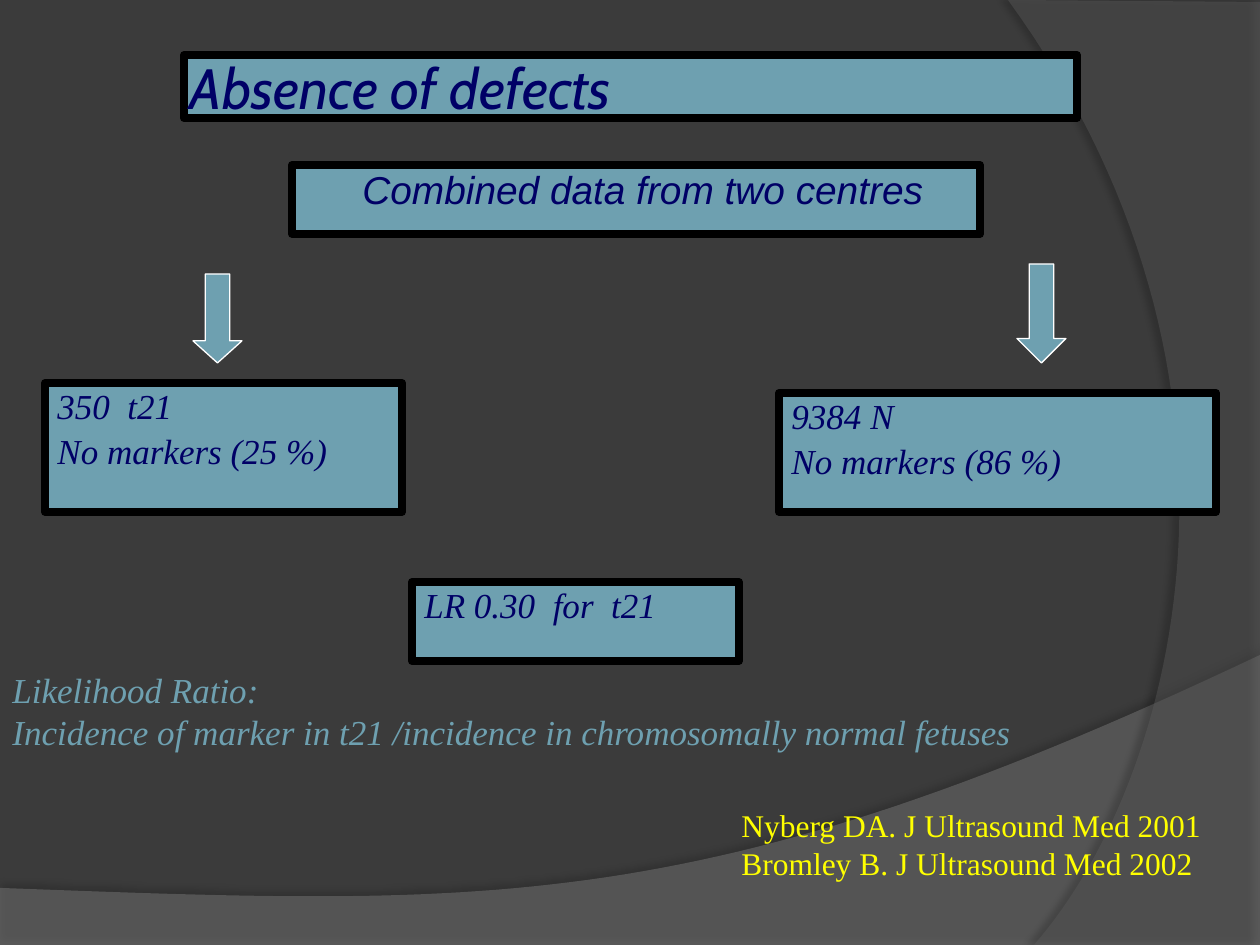
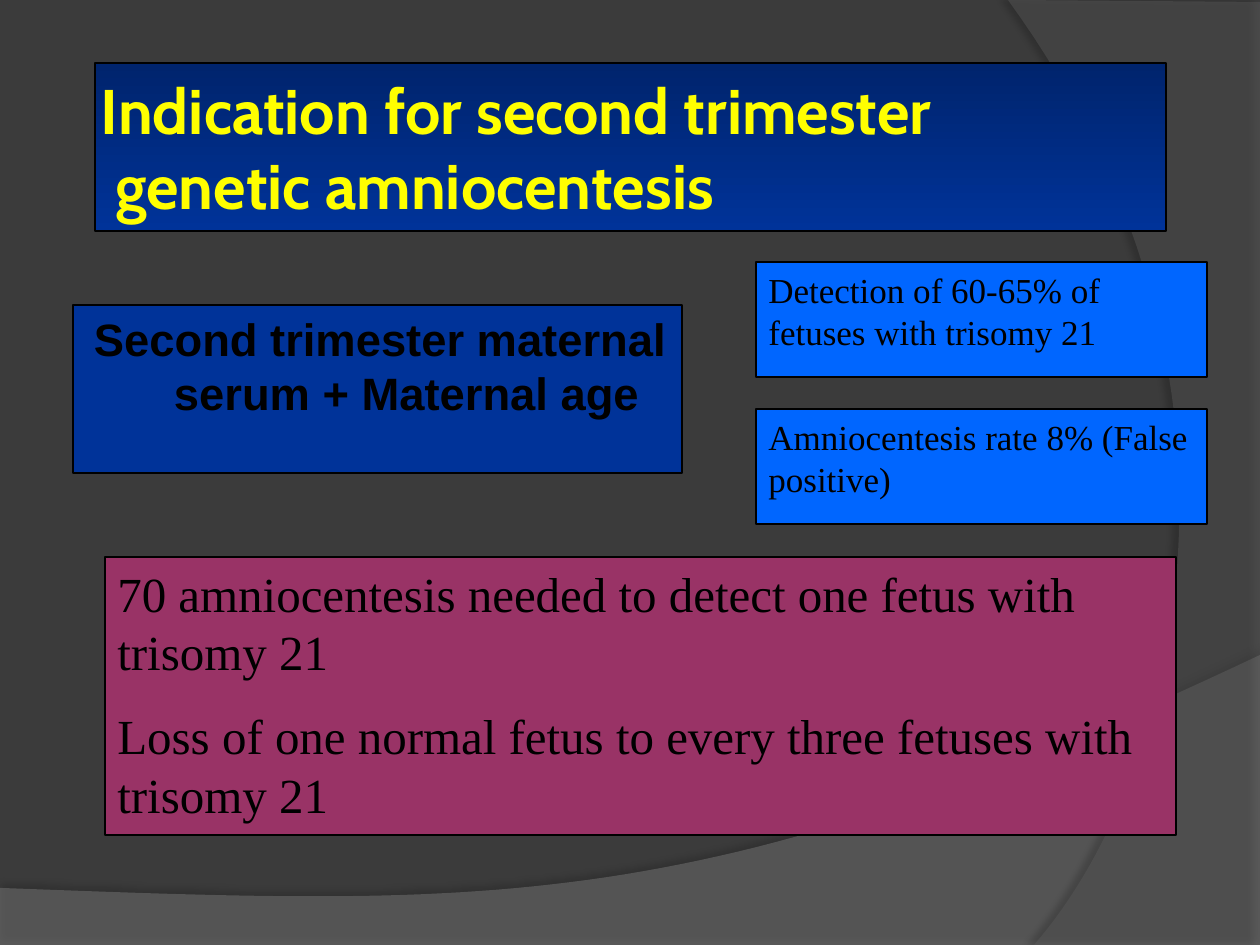
from lxml.etree import SubElement
from pptx import Presentation
from pptx.dml.color import RGBColor
from pptx.enum.shapes import MSO_SHAPE
from pptx.enum.text import MSO_ANCHOR, MSO_AUTO_SIZE, PP_ALIGN
from pptx.oxml.ns import qn
from pptx.util import Emu, Pt

# Shared style
BACKGROUND = RGBColor(0x3B, 0x3B, 0x3B)
LOWER_BAND = RGBColor(0x7F, 0x7F, 0x7F)
RIGHT_BAND = RGBColor(0x5E, 0x5E, 0x5E)
TEAL = RGBColor(0x6E, 0xA0, 0xB0)
NAVY = RGBColor(0x00, 0x00, 0x66)
DARK_BLUE = RGBColor(0x00, 0x24, 0x6D)
BLUE = RGBColor(0x00, 0x33, 0x99)
BRIGHT_BLUE = RGBColor(0x00, 0x66, 0xFF)
PLUM = RGBColor(0x99, 0x33, 0x66)
YELLOW = RGBColor(0xFF, 0xFF, 0x00)
BLACK = RGBColor(0x00, 0x00, 0x00)
WHITE = RGBColor(0xFF, 0xFF, 0xFF)

TITLE_FONT, HEADING_FONT, TEXT_FONT = "Cabin", "Arial", "Times New Roman"
EMU_PER_PX = 914400 / 126
SLIDE_WIDTH, SLIDE_HEIGHT = 1260, 945
THIN, THICK = 0.75, 4.5
TITLE_ONLY = 5


def px(length):
    return Emu(round(length * EMU_PER_PX))


def curve(start, control_1, control_2, end, steps=60):
    """Points along a cubic curve, without its start."""
    points = []
    for step in range(1, steps + 1):
        t = step / steps
        weights = ((1 - t) ** 3, 3 * t * (1 - t) ** 2, 3 * t * t * (1 - t), t ** 3)
        corners = (start, control_1, control_2, end)
        points.append(tuple(sum(w * corner[axis] for w, corner in zip(weights, corners))
                            for axis in (0, 1)))
    return points


def write_text(text_frame, text, *, font=TEXT_FONT, size=20, color=BLACK, bold=False,
               italic=False, align=PP_ALIGN.LEFT, anchor=MSO_ANCHOR.TOP, inset=None,
               line_spacing=None, gap=0, margin=0, indent=0):
    """Fill a frame: a newline starts a paragraph, a vertical tab breaks a line."""
    text_frame.word_wrap = True
    text_frame.auto_size = MSO_AUTO_SIZE.NONE
    text_frame.vertical_anchor = anchor
    if inset is not None:
        text_frame.margin_left = text_frame.margin_right = px(inset)
        text_frame.margin_top = text_frame.margin_bottom = px(inset)
    text_frame.text = text
    for index, paragraph in enumerate(text_frame.paragraphs):
        paragraph.alignment = align
        paragraph.space_before = Pt(gap if index else 0)
        if line_spacing:
            paragraph.line_spacing = line_spacing
        if margin:
            properties = paragraph._p.get_or_add_pPr()
            properties.set("marL", str(px(margin)))
            properties.set("indent", str(px(indent)))
        for run in paragraph.runs:
            run.font.name = font
            run.font.size = Pt(size)
            run.font.bold = bold
            run.font.italic = italic
            run.font.color.rgb = color


class Deck:
    def __init__(self):
        self.presentation = Presentation()
        self.presentation.slide_width = px(SLIDE_WIDTH)
        self.presentation.slide_height = px(SLIDE_HEIGHT)
        fill = self.presentation.slide_master.background.fill
        fill.solid()
        fill.fore_color.rgb = BACKGROUND
        self.slide = None

    def new_slide(self):
        layout = self.presentation.slide_layouts[TITLE_ONLY]
        self.slide = self.presentation.slides.add_slide(layout)
        lower_start, lower_end = (1260, 655), (0, 888)
        self.band([(0, 888), (0, 945), (1260, 945), lower_start]
                  + curve(lower_start, (704, 919), (493, 906), lower_end),
                  LOWER_BAND, alpha=45, shadow=(35, 4, 3.5, 270))
        right_start, right_end = (1034, 945), (1008, 0)
        self.band([(1260, 2), (1260, 945), right_start]
                  + curve(right_start, (1178, 780), (1283, 378), right_end),
                  RIGHT_BAND, alpha=40, shadow=(45, 4, 4, 180))

    def band(self, points, color, alpha, shadow):
        """Translucent curved background area with a soft shadow."""
        corners = [(px(x), px(y)) for x, y in points]
        builder = self.slide.shapes.build_freeform(*corners[0])
        builder.add_line_segments(corners[1:], close=True)
        shape = builder.convert_to_shape()
        self.paint(shape, color)
        properties = shape.element.spPr
        fill_color = properties.find(qn("a:solidFill")).find(qn("a:srgbClr"))
        SubElement(fill_color, qn("a:alpha"), val=str(alpha * 1000))
        shadow_alpha, blur, distance, direction = shadow
        outer = SubElement(properties.find(qn("a:effectLst")), qn("a:outerShdw"),
                           blurRad=str(Pt(blur)), dist=str(Pt(distance)),
                           dir=str(direction * 60000), algn="ctr", rotWithShape="0")
        shadow_color = SubElement(outer, qn("a:srgbClr"), val=str(BLACK))
        SubElement(shadow_color, qn("a:alpha"), val=str(shadow_alpha * 1000))

    def paint(self, shape, fill, line=None, line_width=THIN):
        """Fill with one colour, or with a (top, bottom) pair as a gradient."""
        if isinstance(fill, RGBColor):
            shape.fill.solid()
            shape.fill.fore_color.rgb = fill
        else:
            shape.fill.gradient()
            shape.fill.gradient_angle = 270
            for position, (stop, color) in enumerate(zip(shape.fill.gradient_stops, fill)):
                stop.color.rgb = color
                stop.position = position
        if line is None:
            shape.line.fill.background()
        else:
            shape.line.color.rgb = line
            shape.line.width = Pt(line_width)
        if hasattr(shape, "shadow"):
            shape.shadow.inherit = False

    def title(self, box, text, fill, line_width=THIN, **text_format):
        title = self.slide.shapes.title
        title.left, title.top, title.width, title.height = map(px, box)
        self.paint(title, fill, BLACK, line_width)
        write_text(title.text_frame, text, font=TITLE_FONT, anchor=MSO_ANCHOR.MIDDLE,
                   inset=6, **text_format)
        title.element.getparent().append(title.element)  # in front of the bands

    def box(self, box, text, fill, line_width=THIN, **text_format):
        shape = self.slide.shapes.add_shape(MSO_SHAPE.RECTANGLE, *map(px, box))
        self.paint(shape, fill, BLACK, line_width)
        write_text(shape.text_frame, text, **text_format)

    def down_arrow(self, box, head):
        arrow = self.slide.shapes.add_shape(MSO_SHAPE.DOWN_ARROW, *map(px, box))
        arrow.adjustments[0] = 0.5
        arrow.adjustments[1] = head
        self.paint(arrow, TEAL, WHITE)

    def text(self, box, text, **text_format):
        text_box = self.slide.shapes.add_textbox(*map(px, box))
        write_text(text_box.text_frame, text, **text_format)


def build_absence_of_defects(deck):
    deck.new_slide()
    deck.title((184, 55, 893, 63), "Absence of defects", TEAL, THICK,
               size=32.4, color=NAVY, italic=True)
    deck.box((292, 165, 688, 69), "Combined data from two centres", TEAL, THICK,
             font=HEADING_FONT, size=22.2, color=NAVY, italic=True,
             line_spacing=0.9, margin=58)

    # Both groups and the resulting ratio
    deck.down_arrow((193, 274, 49, 89), head=0.45)
    deck.down_arrow((1017, 264, 49, 99), head=0.5)
    results = [
        ((45, 383, 357, 129), "350  t21\nNo markers (25 %)"),
        ((779, 393, 437, 119), "9384 N\nNo markers (86 %)"),
        ((412, 582, 327, 79), "LR 0.30  for  t21"),
    ]
    for box, text in results:
        deck.box(box, text, TEAL, THICK, color=NAVY, italic=True,
                 line_spacing=0.9, gap=4, margin=48, indent=-48)

    # References and definition
    deck.text((729, 800, 490, 88),
              "Nyberg DA. J Ultrasound Med 2001\nBromley B. J Ultrasound Med 2002",
              size=18, color=YELLOW)
    deck.text((0, 662, 1222, 113),
              "Likelihood Ratio:\v"
              "Incidence of marker in t21 /incidence in chromosomally normal fetuses",
              color=TEAL, italic=True)


def build_amniocentesis_indication(deck):
    deck.new_slide()
    deck.title((95, 63, 1071, 168), "Indication for second trimester\v genetic amniocentesis",
               (DARK_BLUE, BLUE), size=36, color=YELLOW, bold=True)
    deck.box((73, 305, 609, 168), "Second trimester maternal serum + Maternal age", BLUE,
             font=HEADING_FONT, size=25.9, bold=True, align=PP_ALIGN.CENTER,
             margin=58, indent=-53)

    # Test performance
    findings = ["Detection of 60-65% of fetuses with trisomy 21",
                "Amniocentesis rate 8% (False positive)"]
    for row, finding in enumerate(findings):
        deck.box((756, 262 + 147 * row, 451, 115), finding, BRIGHT_BLUE)

    # Consequence
    deck.box((105, 557, 1071, 278),
             "70 amniocentesis needed to detect one fetus with trisomy 21\n"
             "Loss of one normal fetus to every three fetuses with trisomy 21",
             PLUM, size=28, gap=14)


def main():
    deck = Deck()
    build_absence_of_defects(deck)
    build_amniocentesis_indication(deck)
    deck.presentation.save("out.pptx")


if __name__ == "__main__":
    main()
